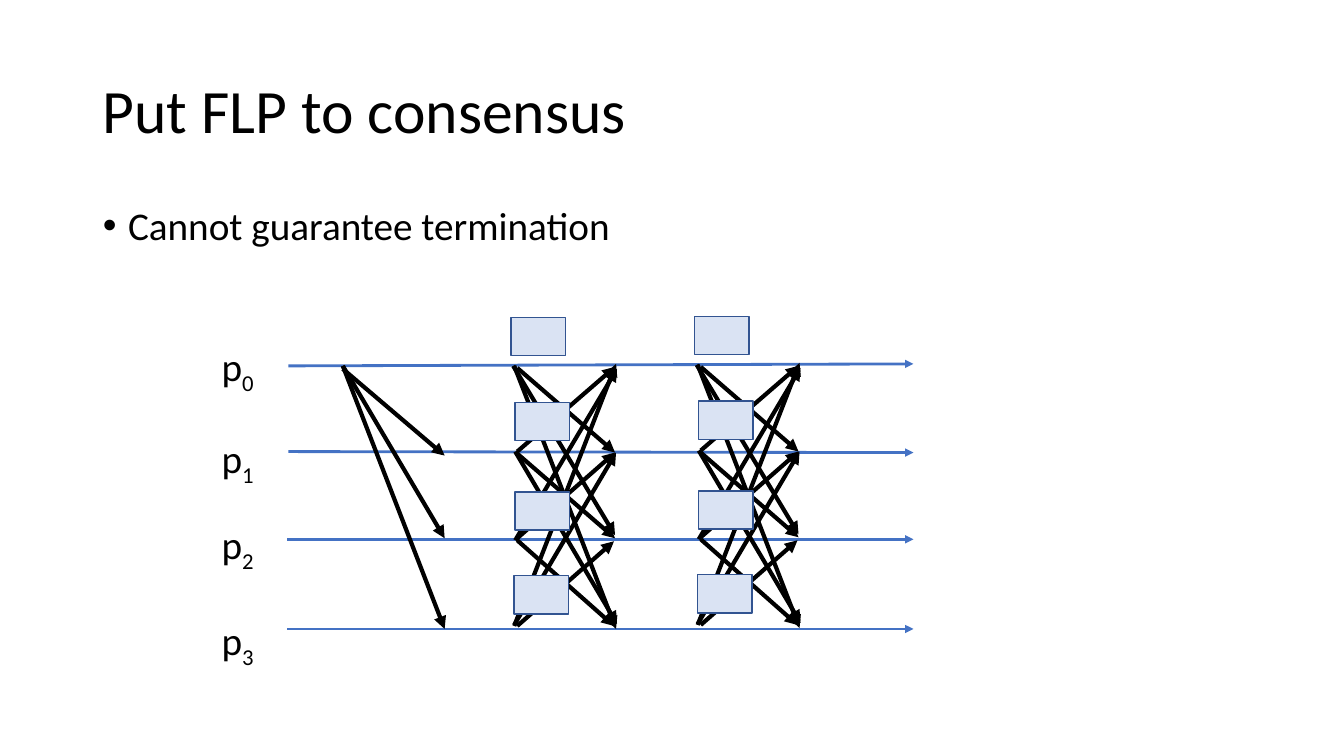
import pptx
import pptx.dml.color
import pptx.enum.shapes
import pptx.enum.text
import pptx.oxml
import pptx.oxml.ns
import pptx.util
from pptx.util import Inches

BLACK, BLUE, PALE, NAVY = "000000", "4472C4", "DAE3F3", "325491"

TIMELINES = [(2.86, 3.63, 3.61), (2.86, 4.48, 4.49), (2.85, 5.35, 5.35), (2.85, 6.24, 6.24)]
LABEL_TOPS = [3.35, 4.26, 5.11, 6.07]
PROPOSALS = [(3.4, 3.63, 4.41, 6.24), (3.4, 3.63, 4.41, 5.34), (3.4, 3.66, 4.41, 4.52)]
EXCHANGE = [
    (5.1, 3.63, 6.11, 6.24), (5.09, 3.63, 6.1, 5.31), (5.13, 3.65, 6.1, 4.49),
    (5.13, 4.5, 6.1, 5.34), (5.11, 4.48, 6.12, 6.19), (5.13, 4.48, 6.1, 3.64),
    (5.13, 5.34, 6.1, 4.49), (5.13, 5.36, 6.09, 6.21), (5.11, 5.36, 6.12, 3.66),
    (5.13, 6.21, 6.09, 5.37), (5.1, 6.2, 6.11, 4.49), (5.1, 6.21, 6.11, 3.61),
]
STATE_BOXES = [(5.07, 3.15), (5.11, 3.99), (5.11, 4.88), (5.1, 5.71)]
ROUND_SHIFTS = [(0, 0), (1.82, -0.01)]


def rgb(value):
    return pptx.dml.color.RGBColor.from_string(value)


def add_run(p, text, size=28, color=BLACK, font="Calibri", baseline=None):
    r = p.add_run()
    r.text = text
    r.font.size = pptx.util.Pt(size)
    r.font.name = font
    r.font.color.rgb = rgb(color)
    if baseline is not None:
        r.font._element.set("baseline", str(baseline))
    return r


class Deck:
    """Holds the presentation style and the current slide."""

    def __init__(self):
        self.prs = pptx.Presentation()
        self.prs.slide_width, self.prs.slide_height = Inches(13.33), Inches(7.5)
        self.slide = self.prs.slides.add_slide(self.prs.slide_layouts[1])
        self.shapes = self.slide.shapes

    def placeholder(self, index, text, top, height, size, anchor):
        sp = self.slide.placeholders[index]
        sp.left, sp.top = Inches(0.92), Inches(top)
        sp.width, sp.height = Inches(11.5), Inches(height)
        sp.text_frame.vertical_anchor = anchor
        p = sp.text_frame.paragraphs[0]
        p.alignment = pptx.enum.text.PP_ALIGN.LEFT
        p.line_spacing = 0.9
        add_run(p, text, size=size)
        return p

    def title(self, text):
        self.placeholder(0, text, 0.4, 1.45, 44, pptx.enum.text.MSO_ANCHOR.MIDDLE)

    def bullet(self, text):
        p = self.placeholder(1, text, 2, 4.76, 28, pptx.enum.text.MSO_ANCHOR.TOP)
        p.space_before = pptx.util.Pt(10)
        props = p._p.get_or_add_pPr()
        props.set("marL", str(Inches(0.25)))
        props.set("indent", str(-Inches(0.25)))
        font = pptx.oxml.ns.qn("a:buFont")
        char = pptx.oxml.ns.qn("a:buChar")
        props.append(props.makeelement(font, {"typeface": "Arial"}))
        props.append(props.makeelement(char, {"char": "•"}))

    def arrow(self, x1, y1, x2, y2, color=BLACK, width=3):
        kind = pptx.enum.shapes.MSO_CONNECTOR.STRAIGHT
        sp = self.shapes.add_connector(kind, Inches(x1), Inches(y1), Inches(x2), Inches(y2))
        sp.line.color.rgb = rgb(color)
        sp.line.width = pptx.util.Pt(width)
        ln = sp.line._get_or_add_ln()
        ln.append(ln.makeelement(pptx.oxml.ns.qn("a:tailEnd"), {"type": "triangle"}))
        sp_pr = sp._element.spPr
        sp_pr.append(sp_pr.makeelement(pptx.oxml.ns.qn("a:effectLst"), {}))

    def box(self, x, y):
        kind = pptx.enum.shapes.MSO_SHAPE.RECTANGLE
        sp = self.shapes.add_shape(kind, Inches(x), Inches(y), Inches(0.54), Inches(0.38))
        sp.shadow.inherit = False
        sp.fill.solid()
        sp.fill.fore_color.rgb = rgb(PALE)
        sp.line.color.rgb = rgb(NAVY)
        sp.line.width = pptx.util.Pt(1)

    def label(self, name, subscript, x, y):
        sp = self.shapes.add_textbox(Inches(x), Inches(y), Inches(0.54), Inches(0.57))
        tf = sp.text_frame
        tf.word_wrap = False
        tf.auto_size = pptx.enum.text.MSO_AUTO_SIZE.SHAPE_TO_FIT_TEXT
        p = tf.paragraphs[0]
        add_run(p, name)
        add_run(p, subscript, baseline=-25000)


def main():
    deck = Deck()
    deck.title("Put FLP to consensus")
    deck.bullet("Cannot guarantee termination")
    for x, start, end in TIMELINES:
        deck.arrow(x, start, 9.06, end, color=BLUE, width=2)
    for i, top in enumerate(LABEL_TOPS):
        deck.label("p", str(i), 2.1, top)
    for message in PROPOSALS:
        deck.arrow(*message)
    for dx, dy in ROUND_SHIFTS:
        for x1, y1, x2, y2 in EXCHANGE:
            deck.arrow(x1 + dx, y1 + dy, x2 + dx, y2 + dy)
        for x, y in STATE_BOXES:
            deck.box(x + dx, y + dy)
    deck.prs.save("out.pptx")


if __name__ == "__main__":
    main()
